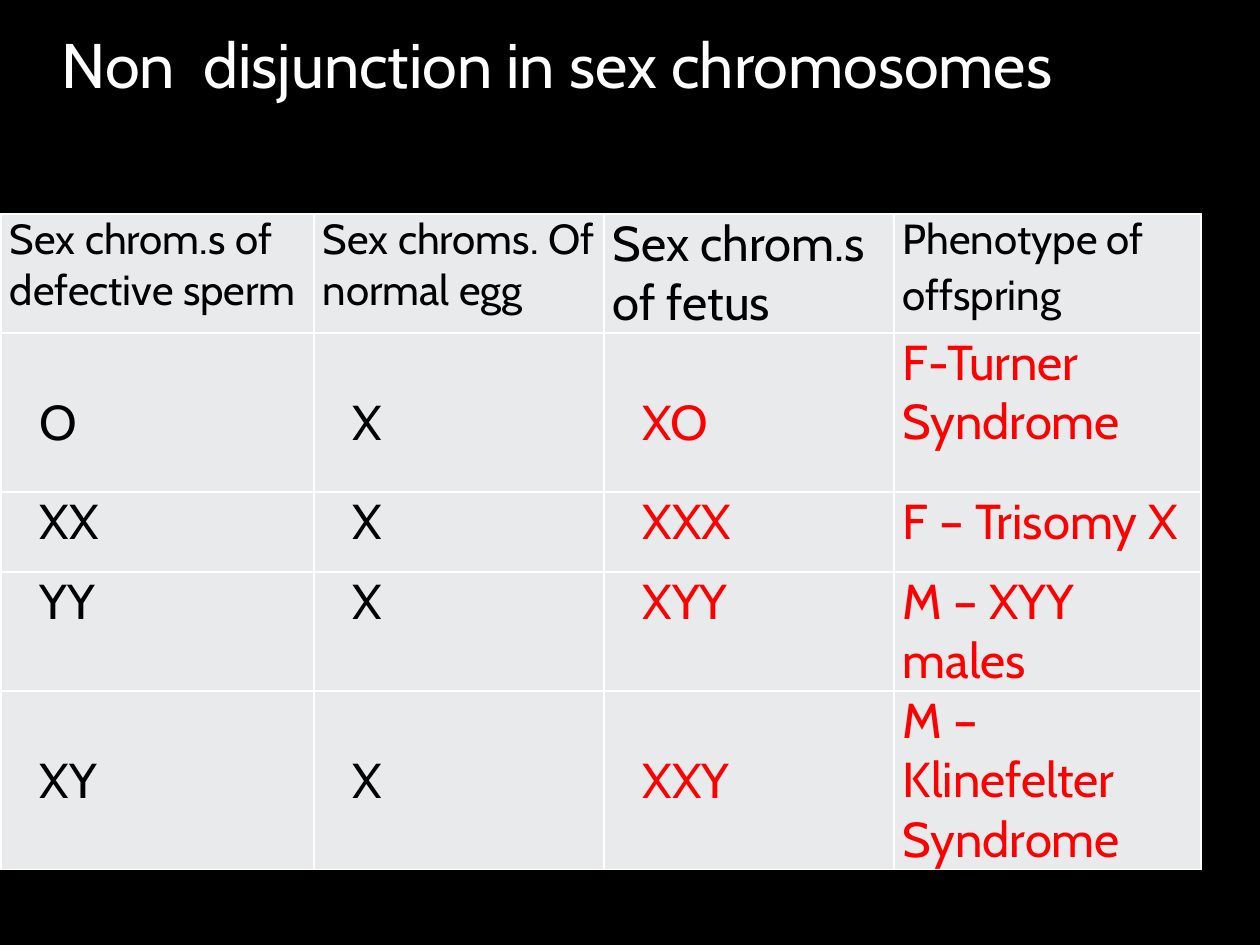
"""Build the slide on non disjunction in sex chromosomes."""
from dataclasses import dataclass

from lxml.etree import SubElement
from pptx import Presentation
from pptx.dml.color import RGBColor
from pptx.enum.text import MSO_ANCHOR, MSO_AUTO_SIZE, PP_ALIGN
from pptx.oxml.ns import qn
from pptx.util import Pt

TITLE = "Non  disjunction in sex chromosomes"
HEADS = [
    ["Sex chrom.s of", "defective sperm"],
    ["Sex chroms. Of normal egg"],
    ["Sex chrom.s of fetus"],
    ["Phenotype of", "offspring"],
]
CASES = [
    ("O", "X", "XO", "F-Turner Syndrome"),
    ("XX", "X", "XXX", "F – Trisomy X"),
    ("YY", "X", "XYY", "M – XYY males"),
    ("XY", "X", "XXY", "M – Klinefelter Syndrome"),
]
COLS = [313, 290, 290, 307]
ROWS = [119, 159, 80, 119, 178]
LOW_ROWS = (1, 4)
LEFT, TOP = 1, 214
PAD, DROP = 9, 60
HANG, BACK = 66, -36
TITLE_BOX = (49, 32, 1058, 147)
TITLE_LIFT = 78


@dataclass(frozen=True)
class Theme:
    """Hold colours and type sizes."""
    font: str = "Cabin"
    back: str = "000000"
    title: str = "FFFFFF"
    text: str = "000000"
    mark: str = "FF0000"
    cell: str = "E9EAEC"
    rule: str = "FFFFFF"
    big: int = 36
    body: int = 28
    head: int = 24


LOOK = Theme()


def px(num):
    """Turn px into EMU."""
    return round(num * 914400 / 126)


def add_run(para, text, size, color):
    """Add one styled run."""
    run = para.add_run()
    run.text = text
    run.font.name = LOOK.font
    run.font.size = Pt(size)
    run.font.color.rgb = RGBColor.from_string(color)


def style_cell(cell):
    """Set the rules, fill and margins of a cell."""
    props = cell._tc.get_or_add_tcPr()
    for side in ("lnL", "lnR", "lnT", "lnB"):
        line = SubElement(props, qn(f"a:{side}"), w=str(Pt(1)))
        fill = SubElement(line, qn("a:solidFill"))
        SubElement(fill, qn("a:srgbClr"), val=LOOK.rule)
    cell.fill.solid()
    cell.fill.fore_color.rgb = RGBColor.from_string(LOOK.cell)
    cell.margin_left = cell.margin_right = px(PAD)
    cell.margin_top = cell.margin_bottom = 0
    cell.vertical_anchor = MSO_ANCHOR.TOP


def fill_cell(cell, lines, size, color):
    """Write each line as a paragraph."""
    frame = cell.text_frame
    for i, text in enumerate(lines):
        para = frame.add_paragraph() if i else frame.paragraphs[0]
        add_run(para, text, size, color)


def add_title(slide):
    """Place and format the title."""
    shape = slide.shapes.title
    shape.left, shape.top, shape.width, shape.height = map(px, TITLE_BOX)
    frame = shape.text_frame
    frame.auto_size = MSO_AUTO_SIZE.NONE
    frame.word_wrap = True
    frame.vertical_anchor = MSO_ANCHOR.BOTTOM
    frame.margin_bottom = px(TITLE_LIFT)
    para = frame.paragraphs[0]
    para.alignment = PP_ALIGN.LEFT
    add_run(para, TITLE, LOOK.big, LOOK.title)


def add_grid(slide):
    """Add the table of cases."""
    box = map(px, (LEFT, TOP, sum(COLS), sum(ROWS)))
    grid = slide.shapes.add_table(len(ROWS), len(COLS), *box).table
    grid.first_row = grid.horz_banding = False
    for col, width in zip(grid.columns, COLS):
        col.width = px(width)
    for row, height in zip(grid.rows, ROWS):
        row.height = px(height)
    for cell in grid.iter_cells():
        style_cell(cell)

    for c, lines in enumerate(HEADS):
        size = LOOK.body if c == 2 else LOOK.head
        fill_cell(grid.cell(0, c), lines, size, LOOK.text)
    grid.cell(0, 3).text_frame.paragraphs[0].space_after = Pt(3)

    for r, case in enumerate(CASES, 1):
        for c, text in enumerate(case):
            cell = grid.cell(r, c)
            color = LOOK.mark if c >= 2 else LOOK.text
            fill_cell(cell, [text], LOOK.body, color)
            if c < 3:
                props = cell.text_frame.paragraphs[0]._p.get_or_add_pPr()
                props.set("marL", str(px(HANG)))
                props.set("indent", str(px(BACK)))
                if r in LOW_ROWS:
                    cell.margin_top = px(DROP)


def main():
    """Build and save the deck."""
    deck = Presentation()
    deck.slide_width, deck.slide_height = px(1260), px(945)
    slide = deck.slides.add_slide(deck.slide_layouts[5])
    slide.background.fill.solid()
    slide.background.fill.fore_color.rgb = RGBColor.from_string(LOOK.back)
    add_grid(slide)
    add_title(slide)
    deck.save("out.pptx")


if __name__ == "__main__":
    main()
